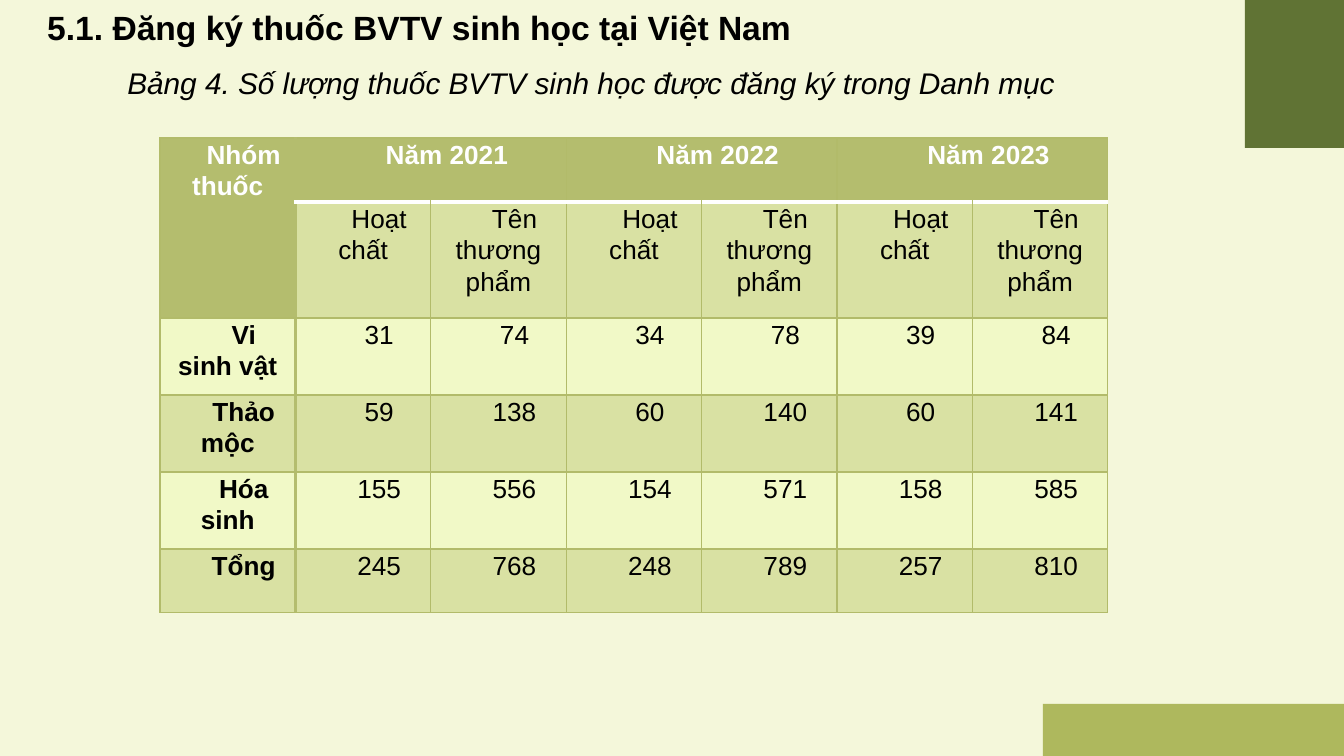
from lxml.etree import SubElement
from pptx import Presentation
from pptx.dml.color import RGBColor
from pptx.enum.shapes import MSO_SHAPE
from pptx.enum.text import MSO_AUTO_SIZE, PP_ALIGN
from pptx.oxml.ns import qn
from pptx.util import Pt

SCALE = 914400 / 134.4
BLACK, WHITE = "000000", "FFFFFF"
HEADER, DARK_BAND, LIGHT_BAND = "B4BD6E", "D9E1A3", "F1F9C7"
GRID = "B2BB6A"

TITLE = "5.1. Đăng ký thuốc BVTV sinh học tại Việt Nam"
CAPTION = "Bảng 4. Số lượng thuốc BVTV sinh học được đăng ký trong Danh mục"
GROUP_HEADING = "Nhóm thuốc"
YEARS = ["Năm 2021", "Năm 2022", "Năm 2023"]
MEASURES = ["Hoạt chất", "Tên thương phẩm"]
COUNTS = [
    ("Vi sinh vật", 31, 74, 34, 78, 39, 84),
    ("Thảo mộc", 59, 138, 60, 140, 60, 141),
    ("Hóa sinh", 155, 556, 154, 571, 158, 585),
    ("Tổng", 245, 768, 248, 789, 257, 810),
]
ROW_HEIGHTS = [64, 116, 77, 77, 77, 64]
TABLE_LEFT, TABLE_TOP, TABLE_WIDTH = 160, 138, 948
# left, top, width, height, colour, opacity in percent
CORNER_BLOCKS = [
    (1043, 704, 301, 52, "7C8C03", 58),
    (1245, 0, 99, 148, "324A00", 76),
]


def px(length):
    return round(length * SCALE)


def color(value):
    return RGBColor.from_string(value)


def add_block(slide, left, top, width, height, fill, opacity):
    block = slide.shapes.add_shape(
        MSO_SHAPE.RECTANGLE, px(left), px(top), px(width), px(height))
    block.shadow.inherit = False
    block.line.fill.background()
    block.fill.solid()
    block.fill.fore_color.rgb = color(fill)
    fill_color = block.fill._xPr.find(qn("a:solidFill"))[0]
    SubElement(fill_color, qn("a:alpha"), val=str(opacity * 1000))


def set_font(paragraph, size, text_color=BLACK, bold=False, italic=False):
    for run in paragraph.runs:
        run.font.name = "Arial"
        run.font.size = Pt(size)
        run.font.bold = bold
        run.font.italic = italic
        run.font.color.rgb = color(text_color)


def set_body_spacing(paragraph):
    """Indent the first line and fix the line pitch, as table and caption share."""
    paragraph._p.get_or_add_pPr().set("indent", str(px(32)))
    paragraph.line_spacing = Pt(17)
    paragraph.space_after = Pt(6)


def add_heading(slide, text, left, top, width, height):
    box = slide.shapes.add_textbox(px(left), px(top), px(width), px(height))
    frame = box.text_frame
    frame.word_wrap = True
    frame.auto_size = MSO_AUTO_SIZE.SHAPE_TO_FIT_TEXT
    frame.text = text
    paragraph = frame.paragraphs[0]
    paragraph.alignment = PP_ALIGN.JUSTIFY
    return paragraph


def set_borders(cell, row, column):
    borders = dict.fromkeys(("lnL", "lnR", "lnT", "lnB"), (GRID, 0.75))
    if column == 0:
        borders["lnR"] = (HEADER, 2)
    if column == 1:
        borders["lnL"] = (HEADER, 2)
    if column > 0 and row < 2:
        borders["lnB" if row == 0 else "lnT"] = (WHITE, 2)
    properties = cell._tc.get_or_add_tcPr()
    for side, (line_color, width) in borders.items():
        line = SubElement(properties, qn(f"a:{side}"), w=str(Pt(width)))
        fill = SubElement(line, qn("a:solidFill"))
        SubElement(fill, qn("a:srgbClr"), val=line_color)


def style_cell(cell, row, column):
    is_header = row == 0 or (row == 1 and column == 0)
    set_borders(cell, row, column)
    cell.fill.solid()
    band = DARK_BAND if row % 2 else LIGHT_BAND
    cell.fill.fore_color.rgb = color(HEADER if is_header else band)
    cell.margin_left = cell.margin_right = px(10)
    cell.margin_top = cell.margin_bottom = 0
    paragraph = cell.text_frame.paragraphs[0]
    paragraph.alignment = PP_ALIGN.CENTER
    set_body_spacing(paragraph)
    set_font(paragraph, 14, WHITE if is_header else BLACK,
             bold=is_header or column == 0)


def add_counts_table(slide):
    year_row = [GROUP_HEADING]
    for year in YEARS:
        year_row += [year, ""]
    rows = [year_row, [""] + MEASURES * len(YEARS), *COUNTS]
    columns = len(year_row)
    table = slide.shapes.add_table(
        len(rows), columns, px(TABLE_LEFT), px(TABLE_TOP),
        px(TABLE_WIDTH), px(sum(ROW_HEIGHTS))).table
    table.horz_banding = False
    for column in table.columns:
        column.width = px(TABLE_WIDTH / columns)
    for table_row, height in zip(table.rows, ROW_HEIGHTS):
        table_row.height = px(height)
    for row, values in enumerate(rows):
        for column, value in enumerate(values):
            cell = table.cell(row, column)
            cell.text_frame.text = str(value)
            style_cell(cell, row, column)
    table.cell(0, 0).merge(table.cell(1, 0))
    for column in range(1, columns, len(MEASURES)):
        table.cell(0, column).merge(table.cell(0, column + 1))


def main():
    presentation = Presentation()
    presentation.slide_width, presentation.slide_height = px(1344), px(756)
    slide = presentation.slides.add_slide(presentation.slide_layouts[6])
    slide.background.fill.solid()
    slide.background.fill.fore_color.rgb = color("F4F7DA")
    for block in CORNER_BLOCKS:
        add_block(slide, *block)
    title = add_heading(slide, TITLE, 34, 0, 1195, 54)
    set_font(title, 18, bold=True)
    add_counts_table(slide)
    caption = add_heading(slide, CAPTION, 82, 62, 1114, 46)
    set_body_spacing(caption)
    set_font(caption, 16, italic=True)
    presentation.save("out.pptx")


if __name__ == "__main__":
    main()
